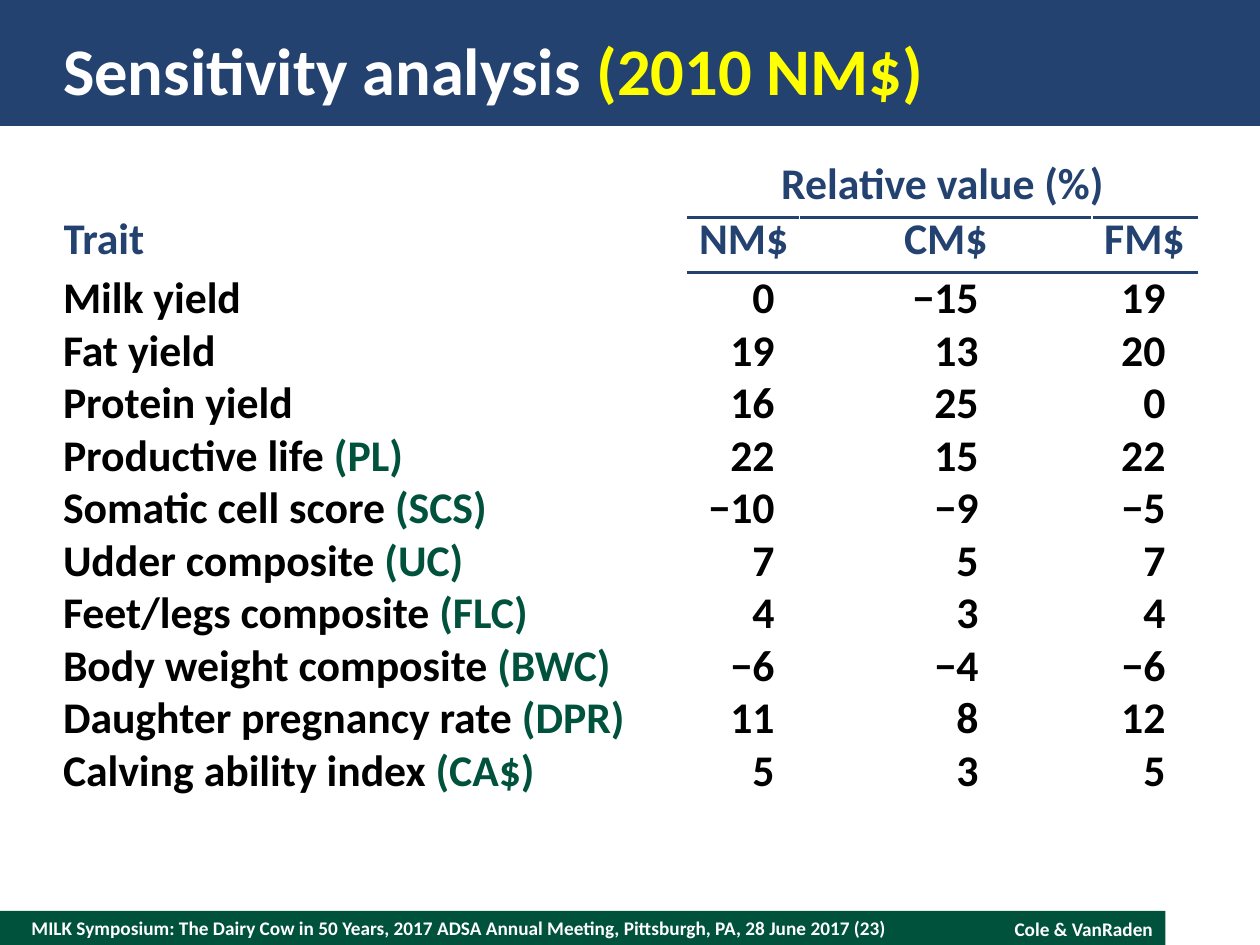
from dataclasses import dataclass

from lxml.etree import SubElement
from pptx import Presentation
from pptx.dml.color import RGBColor
from pptx.enum.shapes import MSO_SHAPE
from pptx.enum.text import MSO_ANCHOR as Anchor, MSO_AUTO_SIZE as AutoSize, PP_ALIGN as Align
from pptx.oxml.ns import qn
from pptx.util import Pt

NAVY = RGBColor(0x24, 0x42, 0x70)
GREEN = RGBColor(0x00, 0x52, 0x3C)
YELLOW = RGBColor(0xFF, 0xFF, 0x00)
WHITE = RGBColor(0xFF, 0xFF, 0xFF)
BLACK = RGBColor(0, 0, 0)
FONT = "Calibri"


@dataclass
class Trait:
    name: str
    values: tuple[str, str, str]
    code: str = ""


@dataclass
class CellStyle:
    line: float
    color: RGBColor = BLACK
    align: Align = Align.LEFT
    anchor: Anchor = Anchor.TOP
    top: float = 0
    right: float = 0
    bottom: float = 0


TRAITS = [
    Trait("Milk yield", ("0", "−15", "19")),
    Trait("Fat yield", ("19", "13", "20")),
    Trait("Protein yield", ("16", "25", "0")),
    Trait("Productive life", ("22", "15", "22"), "PL"),
    Trait("Somatic cell score", ("−10", "−9", "−5"), "SCS"),
    Trait("Udder composite", ("7", "5", "7"), "UC"),
    Trait("Feet/legs composite", ("4", "3", "4"), "FLC"),
    Trait("Body weight composite", ("−6", "−4", "−6"), "BWC"),
    Trait("Daughter pregnancy rate", ("11", "8", "12"), "DPR"),
    Trait("Calving ability index", ("5", "3", "5"), "CA$"),
]
INDEXES = ("NM$", "CM$", "FM$")
COLUMN_WIDTHS = (357, 64, 167, 60)
VALUE_INSETS = (14.4, 64.8, 18)
HEADER_HEIGHT, ROW_HEIGHT = 31.5, 30

TRAIT_HEADER = CellStyle(24, NAVY, anchor=Anchor.BOTTOM, bottom=3.6)
GROUP_HEADER = CellStyle(24, NAVY, Align.CENTER, Anchor.BOTTOM, bottom=3.6)
INDEX_HEADER = CellStyle(22, NAVY, Align.CENTER, Anchor.BOTTOM, top=3.6, bottom=3.6)
TRAIT_NAME = CellStyle(30)


def set_font(font, size: float, color: RGBColor) -> None:
    font.name, font.size, font.bold = FONT, Pt(size), True
    font.color.rgb = color


def clear_insets(frame) -> None:
    frame.margin_left = frame.margin_top = frame.margin_right = frame.margin_bottom = 0


def add_band(page, top: float, width: float, height: float, color: RGBColor):
    band = page.shapes.add_shape(MSO_SHAPE.RECTANGLE, 0, Pt(top), Pt(width), Pt(height))
    band.shadow.inherit = False
    band.fill.solid()
    band.fill.fore_color.rgb = color
    band.line.fill.background()
    return band


def add_footer(page, text: str, left: float, width: float, height: float, align: Align):
    box = page.shapes.add_textbox(Pt(left), Pt(520.5), Pt(width), Pt(height))
    frame = box.text_frame
    frame.word_wrap = True
    para = frame.paragraphs[0]
    para.text, para.alignment = text, align
    set_font(para.font, 11, WHITE)
    return frame


def add_title(page) -> None:
    title = page.shapes.title
    title.left, title.top, title.width, title.height = Pt(36), Pt(14.4), Pt(648), Pt(50.4)
    frame = title.text_frame
    frame.auto_size = AutoSize.NONE
    frame.vertical_anchor = Anchor.MIDDLE
    clear_insets(frame)
    para = frame.paragraphs[0]
    para.alignment = Align.LEFT
    set_font(para.font, 38, WHITE)
    para.add_run().text = "Sensitivity analysis "
    span = para.add_run()
    span.text = "(2010 NM$)"
    span.font.color.rgb = YELLOW


def write_cell(cell, text: str, style: CellStyle, code: str = "") -> None:
    cell.margin_left = 0
    cell.margin_top, cell.margin_right = Pt(style.top), Pt(style.right)
    cell.margin_bottom, cell.vertical_anchor = Pt(style.bottom), style.anchor
    para = cell.text_frame.paragraphs[0]
    para.text, para.alignment = text, style.align
    para.line_spacing = Pt(style.line)
    set_font(para.font, 25, style.color)
    if code:
        span = para.add_run()
        span.text = f" ({code})"
        span.font.color.rgb = GREEN


def add_rule(cell, side: str) -> None:
    """Draw a navy border on one side of a cell: lnT or lnB."""
    properties = cell._tc.get_or_add_tcPr()
    border = properties.makeelement(qn(f"a:{side}"), {"w": str(Pt(2.25))})
    fill = SubElement(border, qn("a:solidFill"))
    SubElement(fill, qn("a:srgbClr"), val=str(NAVY))
    properties.insert(0, border)


def add_trait_table(page) -> None:
    row_count = len(TRAITS) + 2
    height = 2 * HEADER_HEIGHT + len(TRAITS) * ROW_HEIGHT
    table = page.shapes.add_table(row_count, len(COLUMN_WIDTHS), Pt(36), Pt(92.9),
                                  Pt(sum(COLUMN_WIDTHS)), Pt(height)).table
    table.first_row = table.horz_banding = False
    for column, width in zip(table.columns, COLUMN_WIDTHS):
        column.width = Pt(width)
    for index, row in enumerate(table.rows):
        row.height = Pt(HEADER_HEIGHT if index < 2 else ROW_HEIGHT)
    for cell in table.iter_cells():
        cell.fill.background()

    table.cell(0, 0).merge(table.cell(1, 0))
    table.cell(0, 1).merge(table.cell(0, 3))
    write_cell(table.cell(0, 0), "Trait", TRAIT_HEADER)
    write_cell(table.cell(0, 1), "Relative value (%)", GROUP_HEADER)
    for column, name in enumerate(INDEXES, 1):
        write_cell(table.cell(1, column), name, INDEX_HEADER)
        add_rule(table.cell(0, column), "lnB")
        add_rule(table.cell(1, column), "lnT")

    for row, trait in enumerate(TRAITS, 2):
        write_cell(table.cell(row, 0), trait.name, TRAIT_NAME, trait.code)
        for column, (value, inset) in enumerate(zip(trait.values, VALUE_INSETS), 1):
            write_cell(table.cell(row, column), value,
                       CellStyle(30, align=Align.RIGHT, right=inset))


def main() -> None:
    deck = Presentation()
    deck.slide_width, deck.slide_height = Pt(720), Pt(540)
    page = deck.slides.add_slide(deck.slide_layouts[5])
    add_title(page)
    header = add_band(page, 0, 720, 72, NAVY)
    page.shapes.title.element.addprevious(header.element)  # keep the band behind the title
    add_band(page, 520.5, 666, 19.5, GREEN)
    meeting = add_footer(
        page, "MILK Symposium: The Dairy Cow in 50 Years, 2017 ADSA Annual Meeting, "
        "Pittsburgh, PA, 28 June 2017 (23)", 18, 504, 19.5, Align.LEFT)
    meeting.vertical_anchor = Anchor.MIDDLE
    clear_insets(meeting)
    add_footer(page, "Cole & VanRaden", 522, 144, 20.9, Align.RIGHT)
    add_trait_table(page)
    deck.save("out.pptx")


if __name__ == "__main__":
    main()
